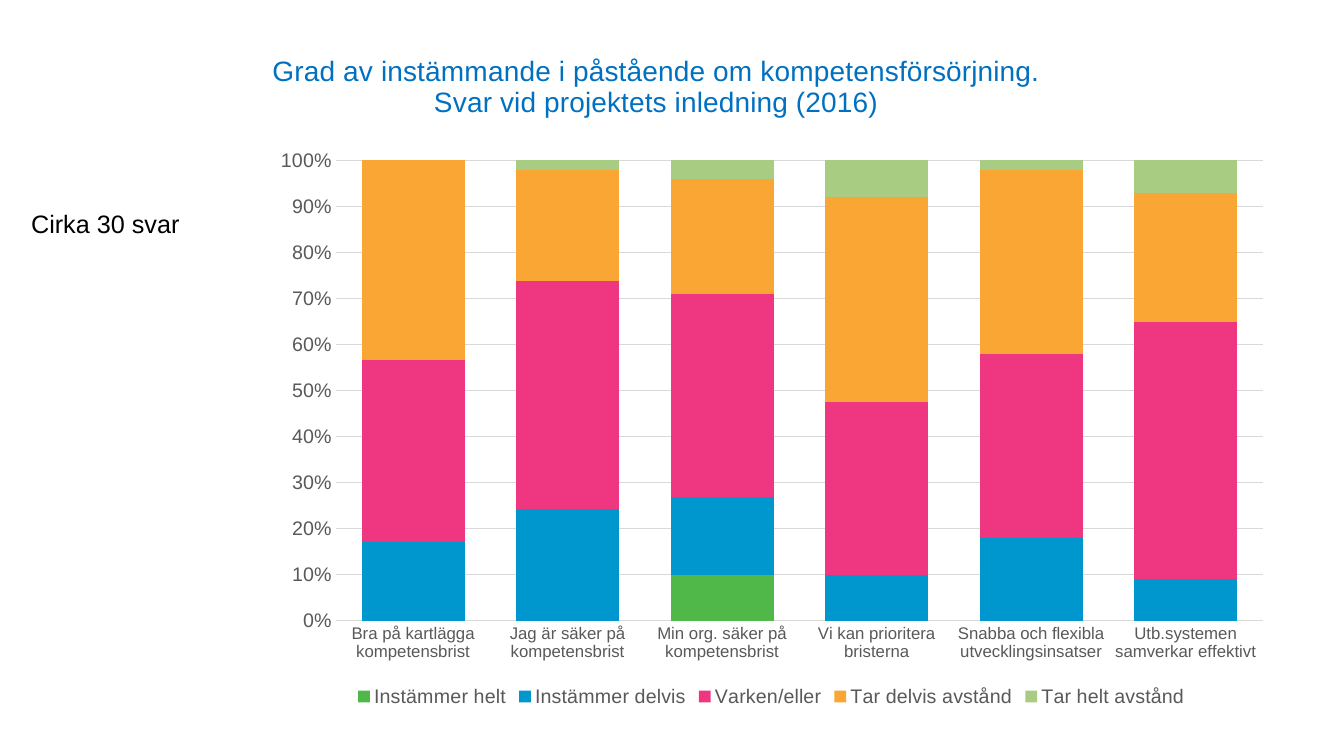
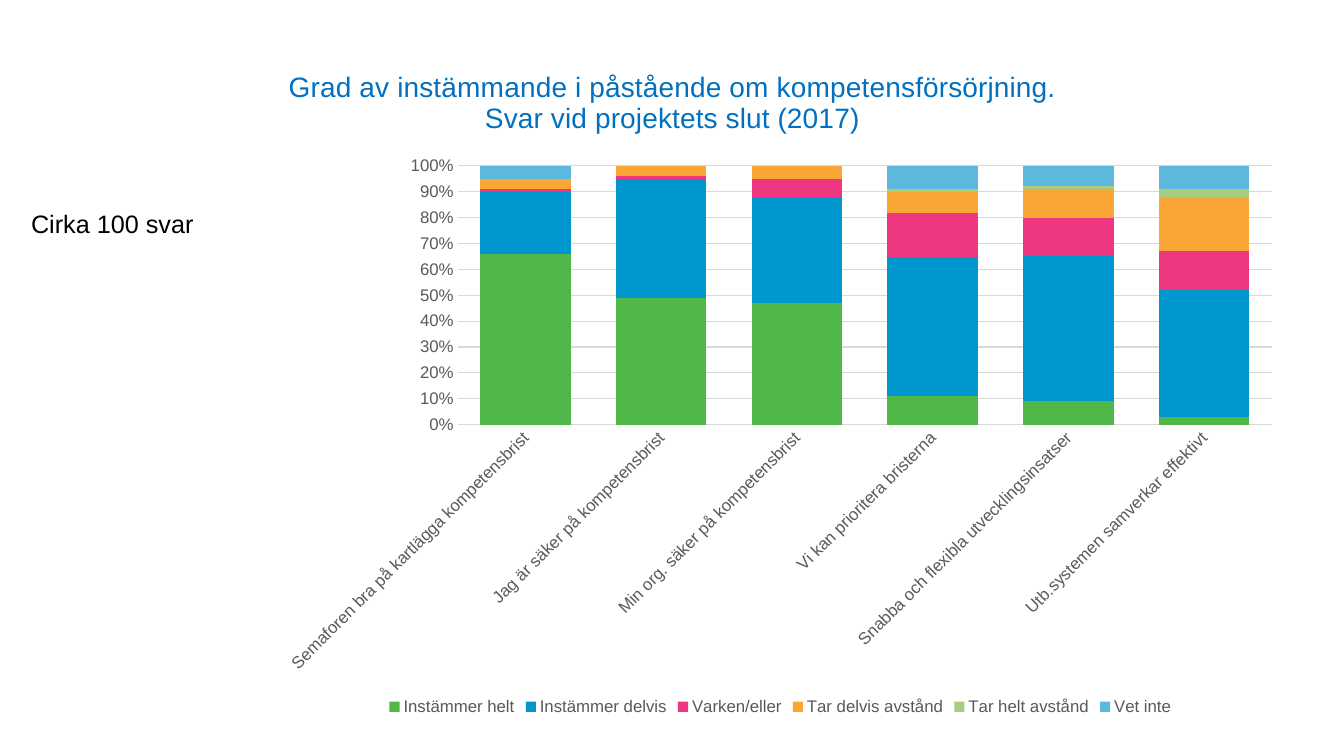
from lxml import etree
from pptx import Presentation
from pptx.chart.data import CategoryChartData
from pptx.dml.color import RGBColor
from pptx.enum.chart import XL_CHART_TYPE, XL_LEGEND_POSITION, XL_TICK_MARK
from pptx.enum.text import MSO_AUTO_SIZE, PP_ALIGN
from pptx.oxml.ns import qn
from pptx.util import Inches, Pt

STACKED = XL_CHART_TYPE.COLUMN_STACKED_100
BOTTOM = XL_LEGEND_POSITION.BOTTOM
NO_TICK = XL_TICK_MARK.NONE
FIT_SHAPE = MSO_AUTO_SIZE.SHAPE_TO_FIT_TEXT
CENTER = PP_ALIGN.CENTER

FONT = "Arial"
BLACK, GRAY, RULE, BLUE = "000000", "595959", "D9D9D9", "0070C0"
ANSWER_COLORS = {
    "Instämmer helt": "50B848",
    "Instämmer delvis": "0097CF",
    "Varken/eller": "EE3780",
    "Tar delvis avstånd": "FAA634",
    "Tar helt avstånd": "A8CD82",
    "Vet inte": "5DB8DE",
}
QUESTION = "Grad av instämmande i påstående om kompetensförsörjning."
STATEMENTS = [
    "Jag är säker på kompetensbrist",
    "Min org. säker på kompetensbrist",
    "Vi kan prioritera bristerna",
    "Snabba och flexibla utvecklingsinsatser",
    "Utb.systemen samverkar effektivt",
]

SURVEYS = [
    {
        "count": "Cirka 30 svar",
        "count_box": (0.21, 2.02, 1.69, 0.4),
        "chart_box": (2.57, 0.44, 10.16, 6.62),
        "occasion": "Svar vid projektets inledning (2016)",
        "title_at": {"x": 0.01, "y": 0.01},
        "plot_at": {"x": 0.075, "y": 0.174, "w": 0.905, "h": 0.69},
        "value_size": 14,
        "label_angle": 0,
        "first_statement": "Bra på kartlägga kompetensbrist",
        "answers": [
            (None, None, 10, None, None, None),
            (17, 24, 17, 10, 18, 9),
            (39, 49, 44, 38, 40, 56),
            (43, 24, 25, 45, 40, 28),
            (None, 2, 4, 8, 2, 7),
        ],
    },
    {
        "count": "Cirka 100 svar",
        "count_box": (0.21, 2.02, 1.83, 0.4),
        "chart_box": (2.66, 0.52, 10.16, 6.62),
        "occasion": "Svar vid projektets slut (2017)",
        "title_at": {"x": 0.017, "y": 0.022},
        "plot_at": {"x": 0.185, "y": 0.17, "w": 0.795, "h": 0.388},
        "value_size": 12,
        "label_angle": -45,
        "first_statement": "Semaforen bra på kartlägga kompetensbrist",
        "answers": [
            (66, 49, 47, 11, 9, 3),
            (24, 46, 41, 53, 56, 49),
            (1, 1, 7, 17, 15, 15),
            (4, 4, 5, 8, 11, 21),
            (None, None, None, 1, 1, 3),
            (5, None, None, 9, 8, 9),
        ],
    },
]


def color(hex_value):
    return RGBColor.from_string(hex_value)


def apply(target, values):
    for name, value in values.items():
        setattr(target, name, value)


def style_font(font, size, hex_value):
    apply(font, {"name": FONT, "size": Pt(size), "bold": False})
    font.color.rgb = color(hex_value)


def style_rule(line):
    line.width = Pt(0.75)
    line.color.rgb = color(RULE)


def set_layout(parent, index, fractions, inner=False):
    for old in parent.findall(qn("c:layout")):
        parent.remove(old)
    layout = etree.Element(qn("c:layout"))
    manual = etree.SubElement(layout, qn("c:manualLayout"))
    settings = [("layoutTarget", "inner")] if inner else []
    settings += [("xMode", "edge"), ("yMode", "edge")]
    settings += [(side, str(share)) for side, share in fractions.items()]
    for tag, value in settings:
        etree.SubElement(manual, qn("c:" + tag)).set("val", value)
    parent.insert(index, layout)


def add_count(slide, box, text):
    frame = slide.shapes.add_textbox(*map(Inches, box)).text_frame
    apply(frame, {"word_wrap": False, "auto_size": FIT_SHAPE})
    run = frame.paragraphs[0].add_run()
    run.text = text
    style_font(run.font, 18, BLACK)


def add_title(chart, survey):
    chart.has_title = True
    title = chart.chart_title
    frame = title.text_frame
    frame.text = QUESTION + "\n" + survey["occasion"]
    for paragraph in frame.paragraphs:
        paragraph.alignment = CENTER
        style_font(paragraph.font, 20, BLUE)
        style_font(paragraph.runs[0].font, 20, BLUE)
    set_layout(title._element, 1, survey["title_at"])


def style_axes(chart, survey):
    statements, shares = chart.category_axis, chart.value_axis
    for axis, size in ((statements, 12), (shares, survey["value_size"])):
        apply(axis, {"major_tick_mark": NO_TICK, "minor_tick_mark": NO_TICK})
        style_font(axis.tick_labels.font, size, GRAY)
    style_rule(statements.format.line)
    body = statements._element.find(qn("c:txPr")).find(qn("a:bodyPr"))
    body.set("rot", str(survey["label_angle"] * 60000))
    body.set("vert", "horz")

    apply(shares, {"minimum_scale": 0, "maximum_scale": 1,
                   "major_unit": 0.1, "has_major_gridlines": True})
    apply(shares.tick_labels,
          {"number_format": "0%", "number_format_is_linked": False})
    shares.format.line.fill.background()
    style_rule(shares.major_gridlines.format.line)


def add_answers(slide, survey):
    data = CategoryChartData(number_format="0")
    data.categories = [survey["first_statement"]] + STATEMENTS
    for answer, values in zip(ANSWER_COLORS, survey["answers"]):
        data.add_series(answer, values)
    chart = slide.shapes.add_chart(
        STACKED, *map(Inches, survey["chart_box"]), data).chart
    style_font(chart.font, 10, BLACK)
    add_title(chart, survey)
    style_axes(chart, survey)

    plot = chart.plots[0]
    apply(plot, {"gap_width": 50, "overlap": 100, "vary_by_categories": False})
    for answer in plot.series:
        answer.format.fill.solid()
        answer.format.fill.fore_color.rgb = color(ANSWER_COLORS[answer.name])
    plot_area = chart._chartSpace.find(qn("c:chart")).find(qn("c:plotArea"))
    set_layout(plot_area, 0, survey["plot_at"], inner=True)

    chart.has_legend = True
    apply(chart.legend, {"position": BOTTOM, "include_in_layout": False})
    style_font(chart.legend.font, survey["value_size"], GRAY)


def add_survey(deck, survey):
    slide = deck.slides.add_slide(deck.slide_layouts[6])
    add_count(slide, survey["count_box"], survey["count"])
    add_answers(slide, survey)


def main():
    deck = Presentation()
    apply(deck, {"slide_width": Inches(13.33), "slide_height": Inches(7.5)})
    for survey in SURVEYS:
        add_survey(deck, survey)
    deck.save("out.pptx")


if __name__ == "__main__":
    main()
